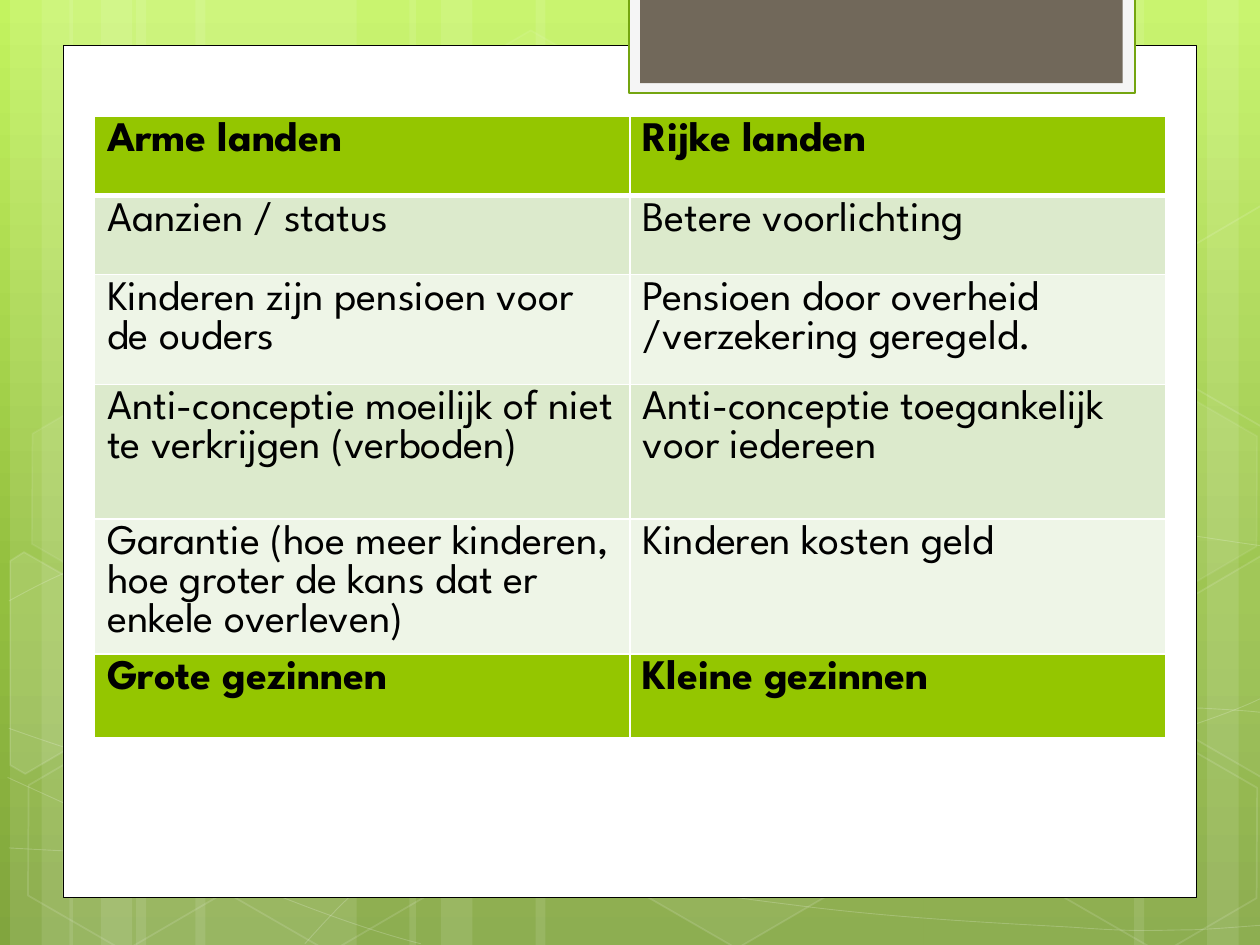
from copy import deepcopy
from math import cos, radians, sin

from lxml import etree
from pptx import Presentation
from pptx.dml.color import RGBColor
from pptx.enum import shapes
from pptx.oxml import ns
from pptx.util import Inches, Pt

FONT = "League Spartan"
WHITE = "FFFFFF"
GREEN, PALE, LIGHT = "94C600", "DCEACC", "EEF5E7"
TILT = 30
SKY = [(0, "C3F35F"), (0.62, "93BF3F"), (1, "81A53E")]
BANDS = [(1.08, 1.75, 0), (0.08, 0.5, 0), (0.33, 0.83, 0), (1.55, 1.75, 0),
         (0.55, 0.5, 0), (0.8, 0.83, 0), (7.33, 1.75, 180), (9.58, 0.5, 180),
         (9, 0.83, 180), (4.25, 3.08, 0), (3.25, 0.5, 0), (3.5, 0.83, 0)]
WAVES = [
    [[(0.07, 6.73)],
     [(0.61, 6.76), (1.15, 6.79), (1.9, 6.78)],
     [(2.65, 6.77), (3.58, 6.75), (4.58, 6.65)],
     [(5.58, 6.55), (7, 6.36), (7.92, 6.17)],
     [(8.83, 5.98), (9.77, 5.68), (10.07, 5.51)]],
    [[(0.07, 4.77)],
     [(0.36, 4.61), (0.65, 4.46), (1.21, 4.31)],
     [(1.78, 4.16), (2.59, 3.94), (3.47, 3.87)],
     [(4.36, 3.8), (5.44, 3.79), (6.54, 3.87)],
     [(7.64, 3.95), (9.47, 4.26), (10.07, 4.34)]],
    [[(0.06, 6.17)],
     [(1.27, 6.72), (2.47, 7.27), (3.34, 7.49)]],
    [[(0.07, 5.78)],
     [(0.38, 5.89), (0.7, 6), (1.28, 6.16)],
     [(1.86, 6.31), (2.73, 6.56), (3.57, 6.73)],
     [(4.4, 6.9), (5.45, 7.08), (6.28, 7.18)],
     [(7.11, 7.29), (8, 7.33), (8.53, 7.36)],
     [(9.05, 7.4), (9.19, 7.38), (9.45, 7.38)],
     [(9.71, 7.37), (9.89, 7.35), (10.07, 7.34)]],
    [[(2.42, 7.49)],
     [(2.6, 7.29), (2.78, 7.09), (3.02, 6.91)],
     [(3.26, 6.73), (3.6, 6.53), (3.88, 6.39)],
     [(4.16, 6.25), (4.33, 6.19), (4.7, 6.09)],
     [(5.06, 5.99), (5.73, 5.85), (6.08, 5.78)],
     [(6.44, 5.71), (6.49, 5.71), (6.8, 5.69)],
     [(7.11, 5.66), (7.6, 5.63), (7.94, 5.62)],
     [(8.29, 5.61), (8.86, 5.62), (8.86, 5.62)],
     [(9.53, 5.62)],
     [(9.71, 5.63), (9.88, 5.64), (9.97, 5.65)],
     [(10.06, 5.66), (10.03, 5.65), (10.06, 5.66)]],
]
CELLS = [(3.34, 0.36, 4, 8), (4.97, 5.89, 6, 12), (0.11, 5.91, 0, 12),
         (0.14, 3.12, 7, 8), (1.74, 5.92, 0, 12), (8.34, 5.93, 0, 12),
         (8.34, 3.14, 7, 8)]
CUTS = [
    ((0.36, 5.35), 10, [(0.08, 4.45), (0.19, 4.38), (0.96, 4.82), (0.95, 5.7),
                        (0.2, 6.14), (0.08, 6.07)]),
    ((9.85, 5.2), 4, [(9.26, 4.85), (10.01, 4.41), (10.09, 4.46),
                      (10.09, 6.13), (10.02, 6.17), (9.26, 5.73)]),
    ((9.85, 2.41), 0, [(9.26, 2.07), (10.01, 1.63), (10.1, 1.68),
                       (10.09, 3.35), (10.02, 3.39), (9.26, 2.95)]),
]
ROWS = [
    (0.63, GREEN, "Arme landen", "Rijke landen"),
    (0.63, PALE, "Aanzien / status", "Betere voorlichting"),
    (0.87, LIGHT, "Kinderen zijn pensioen voor de ouders",
     "Pensioen door overheid /verzekering geregeld."),
    (1.07, PALE, "Anti-conceptie moeilijk of niet te verkrijgen (verboden)",
     "Anti-conceptie toegankelijk voor iedereen"),
    (1.07, LIGHT, "Garantie (hoe meer kinderen, hoe groter de kans dat er "
     "enkele overleven)", "Kinderen kosten geld"),
    (0.67, GREEN, "Grote gezinnen", "Kleine gezinnen"),
]


def rgb(code):
    """Turn a hex string into a colour."""
    return RGBColor.from_string(code)


def tint(fill, code, alpha=100):
    """Make a fill solid, with an opacity in percent, or empty at zero."""
    if not alpha:
        fill.background()
        return
    fill.solid()
    fill.fore_color.rgb = rgb(code)
    if alpha < 100:
        node = fill._xPr.find(".//" + ns.qn("a:srgbClr"))
        etree.SubElement(node, ns.qn("a:alpha"), val=str(alpha * 1000))


def style(shape, code, alpha=100, edge=None, width=1, clear=100):
    """Set the fill and outline of a shape."""
    shape.shadow.inherit = False
    tint(shape.fill, code, alpha)
    if edge:
        shape.line.width = Pt(width)
        tint(shape.line.fill, edge, clear)
    else:
        shape.line.fill.background()


def block(slide, kind, area, turn, *look):
    """Add a styled and turned preset shape."""
    shape = slide.shapes.add_shape(kind, *map(Inches, area))
    shape.rotation = turn
    style(shape, *look)
    return shape


def box(slide, area, *look, turn=0):
    """Add a styled rectangle."""
    block(slide, shapes.MSO_SHAPE.RECTANGLE, area, turn, *look)


def hexa(slide, left, top, alpha, clear):
    """Add a turned, see-through hexagon."""
    shape = block(slide, shapes.MSO_SHAPE.HEXAGON, (left, top, 1.75, 1.52),
                  TILT, WHITE, alpha, WHITE, 1, clear)
    shape.adjustments[0] = 0.285


def trace(slide, dots, close):
    """Build a freeform through points given in inches."""
    first, *rest = [(Inches(x), Inches(y)) for x, y in dots]
    pen = slide.shapes.build_freeform(*first)
    pen.add_line_segments(rest, close=close)
    return pen.convert_to_shape()


def wave(slide, parts):
    """Add a thin line of cubic curves and straight parts."""
    shape = trace(slide, sum(parts, []), False)
    lines = iter(list(shape.element.iter(ns.qn("a:lnTo"))))
    for part in parts[1:]:
        group = [next(lines) for _ in part]
        if len(group) == 3:
            group[0].tag = ns.qn("a:cubicBezTo")
            for line in group[1:]:
                group[0].append(line[0])
                line.getparent().remove(line)
    style(shape, WHITE, 0, WHITE, 0.5, 20)


def cut(slide, mid, alpha, dots):
    """Add a cropped hexagon in a frame turned about its middle."""
    c, s = cos(radians(TILT)), sin(radians(TILT))
    flat = [(mid[0] + (x - mid[0]) * c + (y - mid[1]) * s,
             mid[1] - (x - mid[0]) * s + (y - mid[1]) * c) for x, y in dots]
    shape = trace(slide, flat, True)
    shape.rotation = TILT
    style(shape, WHITE, alpha, WHITE, 1, 12)


def sky(slide):
    """Fill the background with a gradient from top to bottom."""
    fill = slide.background.fill
    fill.gradient()
    fill.gradient_angle = 270
    stops = slide.element.find(".//" + ns.qn("a:gsLst"))
    stops.append(deepcopy(stops[0]))
    for stop, (place, code) in zip(fill.gradient_stops, SKY):
        stop.position = place
        stop.color.rgb = rgb(code)


def rule(cell, side, width):
    """Draw a white border on one side of a cell."""
    line = etree.SubElement(cell._tc.get_or_add_tcPr(), ns.qn("a:ln" + side),
                            w=str(Pt(width)))
    solid = etree.SubElement(line, ns.qn("a:solidFill"))
    etree.SubElement(solid, ns.qn("a:srgbClr"), val=WHITE)


def grid(slide):
    """Add the table that compares poor and rich countries."""
    high = sum(row[0] for row in ROWS)
    table = slide.shapes.add_table(len(ROWS), 2, Inches(0.75), Inches(0.92),
                                   Inches(8.5), Inches(high)).table
    for i, (tall, code, *words) in enumerate(ROWS):
        table.rows[i].height = Inches(tall)
        for j, word in enumerate(words):
            cell = table.cell(i, j)
            for side in "LRTB":
                thick = (i, side) in ((0, "B"), (1, "T"))
                rule(cell, side, 3 if thick else 1)
            tint(cell.fill, code)
            run = cell.text_frame.paragraphs[0].add_run()
            run.text = word
            run.font.name = FONT
            run.font.size = Pt(24)
            run.font.bold = code == GREEN
            run.font.color.rgb = rgb("000000")


def main():
    """Build and save the slide."""
    deck = Presentation()
    deck.slide_width, deck.slide_height = Inches(10), Inches(7.5)
    slide = deck.slides.add_slide(deck.slide_layouts[6])
    sky(slide)
    for left, width, turn in BANDS:
        box(slide, (left, 0, width, 7.5), WHITE, 10, turn=turn)
    for parts in WAVES:
        wave(slide, parts)
    for cell in CELLS:
        hexa(slide, *cell)
    for piece in CUTS:
        cut(slide, *piece)
    box(slide, (0.5, 0.36, 9, 6.76), WHITE, 100, "000000", 0.5)
    box(slide, (4.99, -0.02, 4.02, 0.76), "F5F5F5", 100, "74A510", 1.25)
    box(slide, (5.08, -0.02, 3.83, 0.68), "71685A")
    grid(slide)
    deck.save("out.pptx")


if __name__ == "__main__":
    main()
